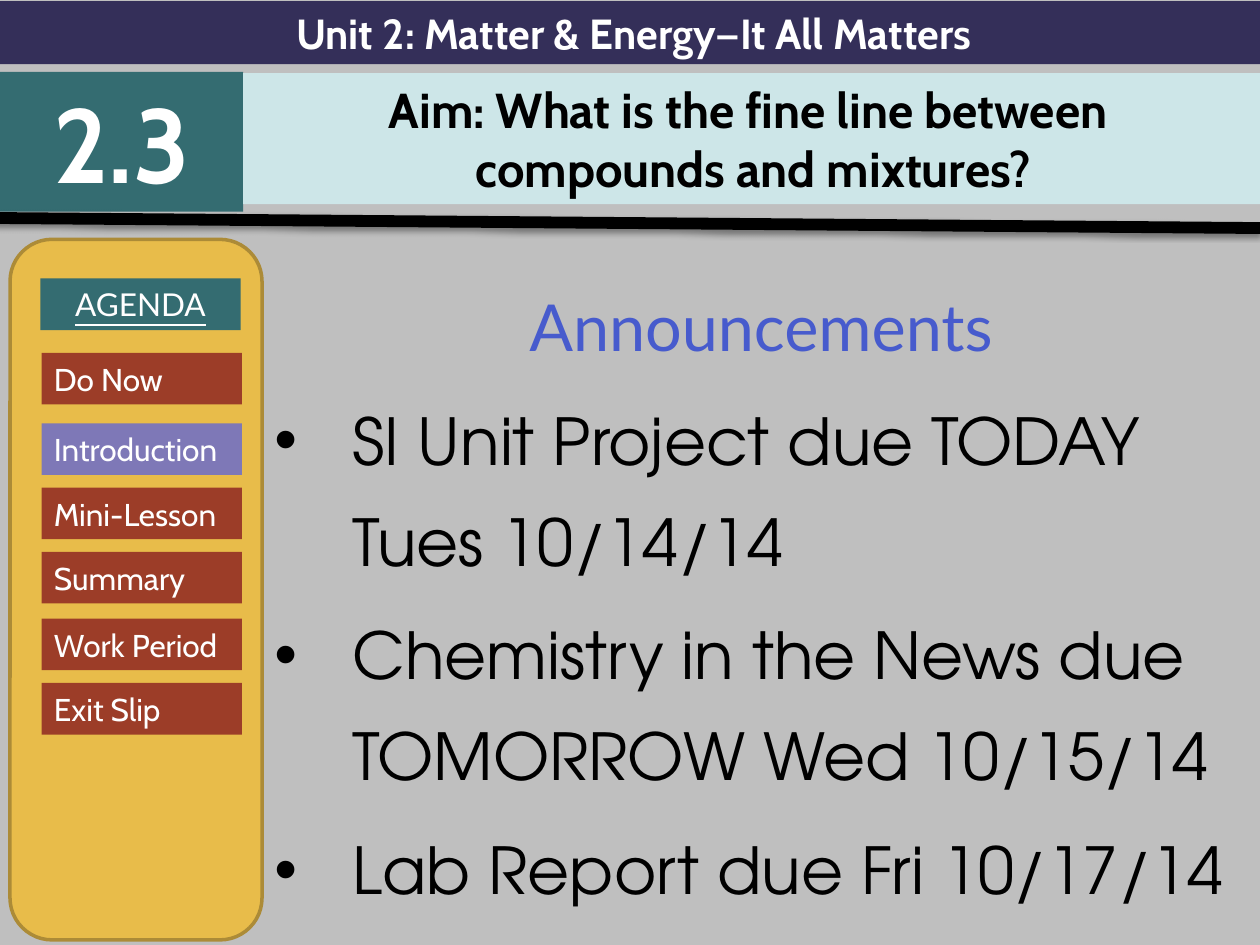
"""Build the Unit 2.3 announcements slide with its agenda sidebar."""
import lxml.etree
import pptx
import pptx.dml.color
import pptx.enum.shapes
import pptx.enum.text
import pptx.oxml.ns
import pptx.util

Inches = pptx.util.Inches
SHAPE = pptx.enum.shapes.MSO_SHAPE
ALIGN = pptx.enum.text.PP_ALIGN
TEAL, RUST, VIOLET = "346C71", "9C3D28", "7E78B7"
AGENDA = [
    ("Do Now", 2.8, RUST),
    ("Introduction", 3.36, VIOLET),
    ("Mini-Lesson", 3.87, RUST),
    ("Summary", 4.38, RUST),
    ("Work Period", 4.91, RUST),
    ("Exit Slip", 5.42, RUST),
]
ANNOUNCEMENTS = [
    "SI Unit Project due TODAY Tues 10/14/14",
    "Chemistry in the News due TOMORROW Wed 10/15/14",
    "Lab Report due Fri 10/17/14",
]


def rgb(color):
    """Turn a hex string into a colour."""
    return pptx.dml.color.RGBColor.from_string(color)


def add_child(parent, tag, **attributes):
    """Append a DrawingML element to parent."""
    element = lxml.etree.SubElement(parent, pptx.oxml.ns.qn(tag))
    for key, value in attributes.items():
        element.set(key, str(value))
    return element


def write(paragraph, text, size=18, font="Cabin", color="FFFFFF", bold=False,
          underline=False, align=ALIGN.LEFT):
    """Put formatted text into a paragraph."""
    paragraph.alignment = align
    run = paragraph.add_run()
    run.text = text
    run.font.size = pptx.util.Pt(size)
    run.font.name = font
    run.font.bold = bold
    run.font.underline = underline
    run.font.color.rgb = rgb(color)


def add_panel(slide, left, top, width, height, fill, lines=(),
              preset=SHAPE.RECTANGLE, border=None, **text_format):
    """Draw a filled panel with one paragraph for each line of text."""
    panel = slide.shapes.add_shape(
        preset, Inches(left), Inches(top), Inches(width), Inches(height))
    panel.shadow.inherit = False
    panel.fill.solid()
    panel.fill.fore_color.rgb = rgb(fill)
    if border:
        panel.line.color.rgb = rgb(border)
        panel.line.width = pptx.util.Pt(2)
    else:
        panel.line.fill.background()
    frame = panel.text_frame
    frame.word_wrap = True
    frame.vertical_anchor = pptx.enum.text.MSO_ANCHOR.MIDDLE
    for index, line in enumerate(lines):
        paragraph = frame.add_paragraph() if index else frame.paragraphs[0]
        write(paragraph, line, **text_format)


def add_divider(slide):
    """Draw the heavy slanted rule with its soft shadow."""
    divider = slide.shapes.add_connector(
        pptx.enum.shapes.MSO_CONNECTOR.STRAIGHT,
        Inches(-0.05), Inches(1.73), Inches(10), Inches(1.81))
    divider.line.color.rgb = rgb("000000")
    divider.line.width = pptx.util.Pt(6.75)
    effects = add_child(divider._element.spPr, "a:effectLst")
    shadow = add_child(effects, "a:outerShdw", blurRad=pptx.util.Pt(3.1),
                       dist=pptx.util.Pt(1.6), dir=90 * 60000, rotWithShape=0)
    shadow_color = add_child(shadow, "a:srgbClr", val="000000")
    add_child(shadow_color, "a:alpha", val=38000)


def add_announcements(slide):
    """Write the heading and the bulleted announcements."""
    box = slide.shapes.add_textbox(
        Inches(2.08), Inches(2.04), Inches(7.92), Inches(5.46))
    frame = box.text_frame
    frame.word_wrap = True
    heading = frame.paragraphs[0]
    write(heading, "Announcements", size=37, font="Lato", color="475BCD",
          align=ALIGN.CENTER)
    for announcement in ANNOUNCEMENTS:
        item = frame.add_paragraph()
        write(item, announcement, size=37, font="TeX Gyre Adventor",
              color="000000")
    for paragraph in frame.paragraphs:
        paragraph.line_spacing = 1.3
        paragraph.space_before = pptx.util.Pt(7.4)
    for item in frame.paragraphs[1:]:
        properties = item._p.get_or_add_pPr()
        properties.set("marL", str(Inches(0.62)))
        properties.set("indent", str(Inches(-0.62)))
        add_child(properties, "a:buFont", typeface="Arial")
        add_child(properties, "a:buChar", char="•")


def add_header(slide):
    """Draw the unit banner, the lesson number and the aim."""
    title_format = {"bold": True, "align": ALIGN.CENTER}
    add_panel(slide, 0, 0.01, 10.06, 0.5, "342F59",
              ["Unit 2: Matter & Energy—It All Matters"], size=24, **title_format)
    add_panel(slide, 0, 0.57, 1.93, 1.11, TEAL, ["2.3"], size=60, **title_format)
    add_panel(slide, 1.93, 0.58, 8.1, 1.04, "CDE6E8",
              ["Aim: What is the fine line between ", "compounds and mixtures?"],
              size=28, color="000000", **title_format)


def add_agenda(slide):
    """Draw the sidebar with the agenda steps."""
    add_panel(slide, 0.08, 1.9, 2, 5.56, "E8BC4A",
              preset=SHAPE.ROUNDED_RECTANGLE, border="AC8B37")
    add_panel(slide, 0.32, 2.21, 1.59, 0.41, TEAL, ["AGENDA"], font="Lato",
              underline=True, align=ALIGN.CENTER)
    for step, top, fill in AGENDA:
        add_panel(slide, 0.33, top, 1.59, 0.41, fill, [step])


def main():
    """Assemble and save the slide."""
    deck = pptx.Presentation()
    deck.slide_width, deck.slide_height = Inches(10), Inches(7.5)
    slide = deck.slides.add_slide(deck.slide_layouts[6])
    slide.background.fill.solid()
    slide.background.fill.fore_color.rgb = rgb("BFBFBF")
    add_announcements(slide)
    add_header(slide)
    add_divider(slide)
    add_agenda(slide)
    deck.save("out.pptx")


if __name__ == "__main__":
    main()
